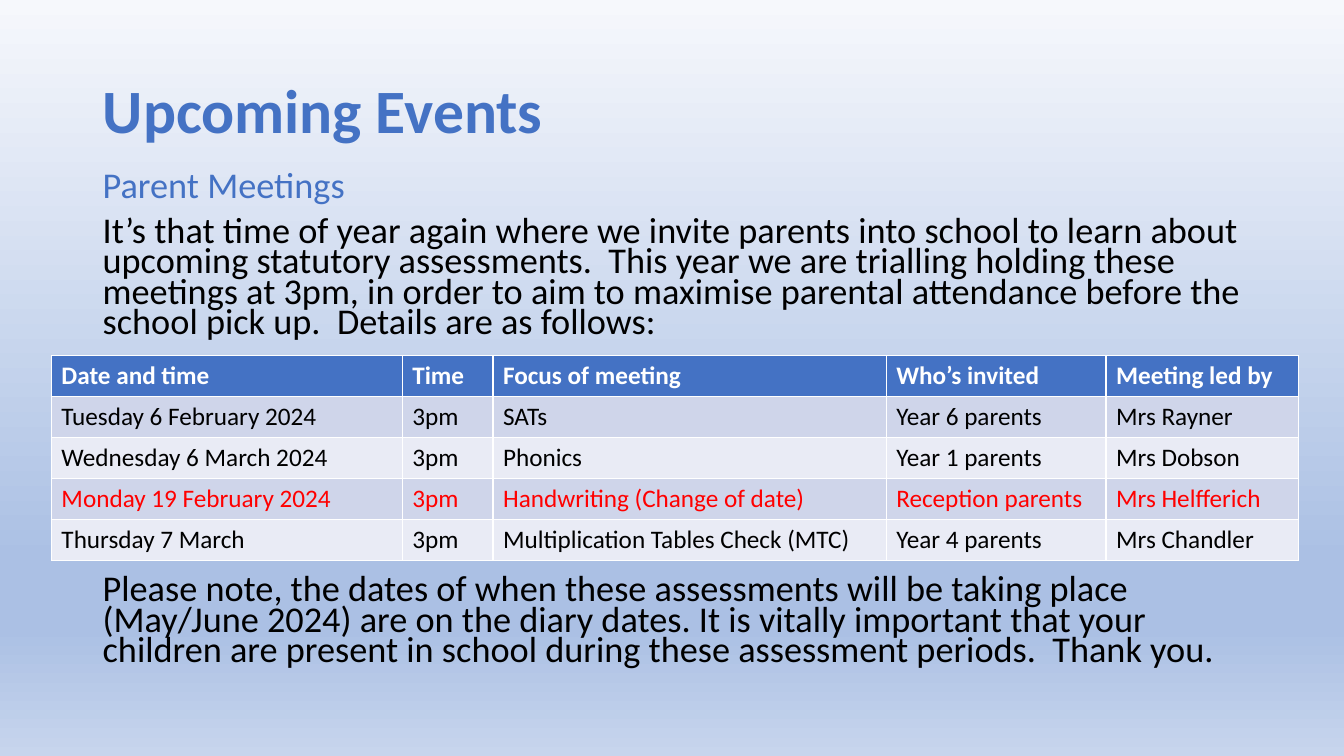
from copy import deepcopy

from pptx import Presentation
from pptx.dml.color import RGBColor
from pptx.enum.text import MSO_ANCHOR, PP_ALIGN
from pptx.oxml.ns import qn
from pptx.util import Inches, Pt

BLUE, BLACK, WHITE, RED = "4472C4", "000000", "FFFFFF", "FF0000"
BANDS = ["CFD5EA", "E9EBF5"]


def rgb(value):
    return RGBColor.from_string(value)


def write(paragraph, wording, color, **font_format):
    """Add the wording as one Calibri run with the given font attributes."""
    font = paragraph.add_run()
    font.text = wording
    font = font.font
    font.color.rgb = rgb(color)
    for name, value in {"name": "Calibri", **font_format}.items():
        setattr(font, name, value)


presentation = Presentation()
presentation.slide_width = Inches(13.33)
presentation.slide_height = Inches(7.5)
slide = presentation.slides.add_slide(presentation.slide_layouts[5])

# Background gradient, top to bottom
gradient_stops = [(0, "F6F8FC"), (0.74, "ABC0E4"), (0.83, "ABC0E4"), (1, "C7D5ED")]
background = slide.background.fill
background.gradient()
background.gradient_angle = 270
stop_list = next(slide.element.iter(qn("a:gsLst")))
while len(stop_list) < len(gradient_stops):
    stop_list.append(deepcopy(stop_list[0]))
for stop, (position, color) in zip(background.gradient_stops, gradient_stops):
    stop.position = position
    stop.color.rgb = rgb(color)

# Title
title = slide.shapes.title
title.left, title.top = Inches(0.92), Inches(0.4)
title.width, title.height = Inches(11.5), Inches(1.45)
title.text_frame.vertical_anchor = MSO_ANCHOR.MIDDLE
heading = title.text_frame.paragraphs[0]
heading.alignment = PP_ALIGN.LEFT
heading.line_spacing = 0.9
write(heading, "Upcoming Events", BLUE, size=Pt(44), bold=True)

# Body text; the space before the last paragraph leaves room for the table
body = slide.shapes.add_textbox(Inches(0.92), Inches(1.68), Inches(11.5), Inches(5.07))
body.text_frame.word_wrap = True
body_paragraphs = [
    ("Parent Meetings", BLUE, 10),
    ("It’s that time of year again where we invite parents into school to learn about "
     "upcoming statutory assessments.  This year we are trialling holding these meetings "
     "at 3pm, in order to aim to maximise parental attendance before the school pick up.  "
     "Details are as follows:", BLACK, 10),
    ("Please note, the dates of when these assessments will be taking place (May/June 2024) "
     "are on the diary dates. It is vitally important that your children are present in "
     "school during these assessment periods.  Thank you.", BLACK, 169),
]
for index, (wording, color, space_before) in enumerate(body_paragraphs):
    paragraph = body.text_frame.add_paragraph() if index else body.text_frame.paragraphs[0]
    paragraph.line_spacing = 0.7
    paragraph.space_before = Pt(space_before)
    write(paragraph, wording, color, size=Pt(25.9))

# Meetings table
meetings = [
    ("Date and time", "Time", "Focus of meeting", "Who’s invited", "Meeting led by"),
    ("Tuesday 6 February 2024", "3pm", "SATs", "Year 6 parents", "Mrs Rayner"),
    ("Wednesday 6 March 2024", "3pm", "Phonics", "Year 1 parents", "Mrs Dobson"),
    ("Monday 19 February 2024", "3pm", "Handwriting (Change of date)",
     "Reception parents", "Mrs Helfferich"),
    ("Thursday 7 March", "3pm", "Multiplication Tables Check (MTC)",
     "Year 4 parents", "Mrs Chandler"),
]
column_widths = [3.48, 0.9, 3.9, 2.18, 1.91]
changed_row = 3
table = slide.shapes.add_table(
    len(meetings), len(column_widths),
    Inches(0.51), Inches(3.53), Inches(sum(column_widths)), Inches(2.03),
).table
for column, width in zip(table.columns, column_widths):
    column.width = Inches(width)
for row_index, meeting in enumerate(meetings):
    is_header = row_index == 0
    fill_color = BLUE if is_header else BANDS[(row_index - 1) % 2]
    text_color = WHITE if is_header else RED if row_index == changed_row else BLACK
    for column_index, wording in enumerate(meeting):
        cell = table.cell(row_index, column_index)
        cell.fill.solid()
        cell.fill.fore_color.rgb = rgb(fill_color)
        write(cell.text_frame.paragraphs[0], wording, text_color,
              size=Pt(18), bold=is_header)

presentation.save("out.pptx")
